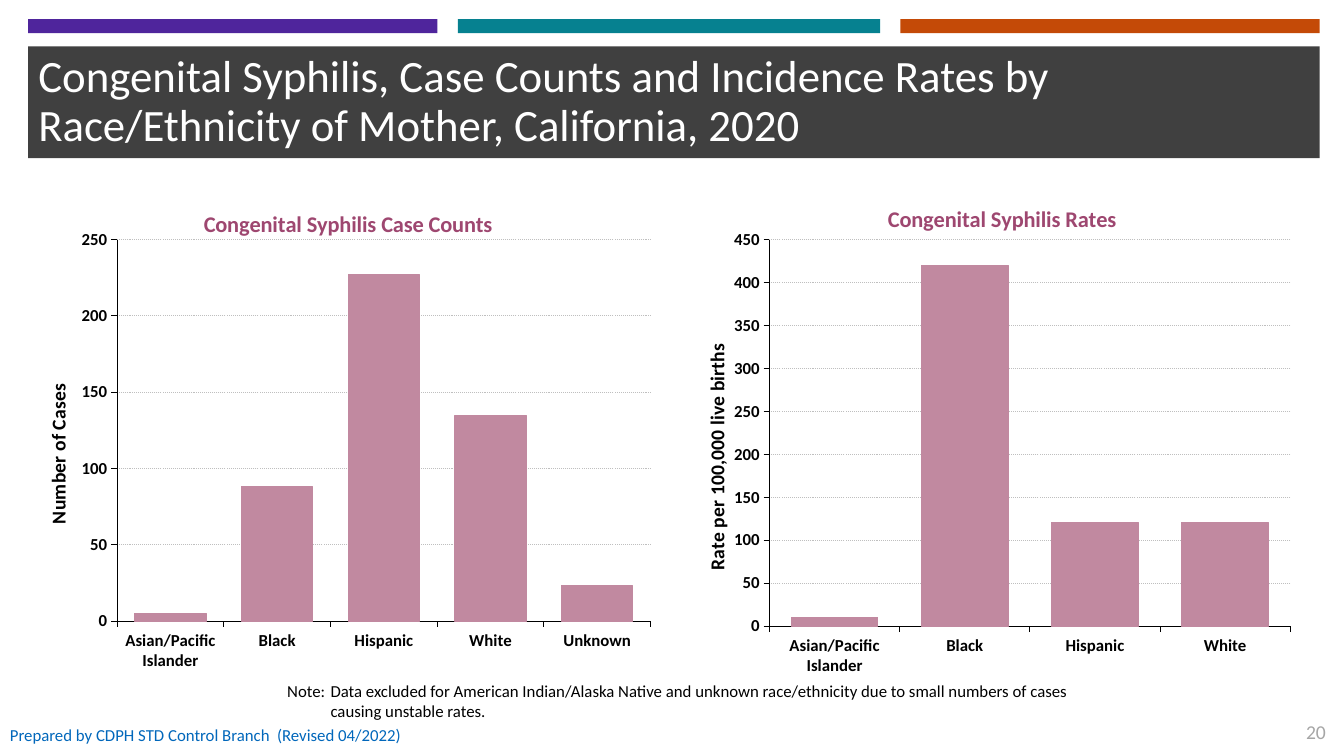
import lxml.etree
import pptx
import pptx.chart.data
import pptx.dml.color
import pptx.enum.chart
import pptx.enum.dml
import pptx.enum.shapes
import pptx.enum.text
import pptx.oxml.ns
import pptx.util
from dataclasses import dataclass

PX = 9144
qn = pptx.oxml.ns.qn
Align = pptx.enum.text.PP_ALIGN
Anchor = pptx.enum.text.MSO_ANCHOR


@dataclass(frozen=True)
class Theme:
    font: str = "Calibri"
    black: str = "000000"
    white: str = "FFFFFF"
    band: str = "404040"
    purple: str = "4F259C"
    teal: str = "068190"
    orange: str = "C44A07"
    link_blue: str = "0167BB"
    page_gray: str = "A6A6A6"
    grid: str = "BFBFBF"
    bar: str = "C189A0"
    heading: str = "9E4770"
    title_size: int = 32
    heading_size: int = 16
    axis_title_size: int = 14
    page_size: int = 14
    body_size: int = 12
    chart_size: int = 10


def rgb(code):
    return pptx.dml.color.RGBColor.from_string(code)


def box(*lengths):
    return [pptx.util.Emu(length * PX) for length in lengths]


def set_layout(parent, **fractions):
    old = parent.find(qn("c:layout"))
    if old is not None:
        parent.remove(old)
    layout = lxml.etree.Element(qn("c:layout"))
    parent.insert(0 if parent.find(qn("c:tx")) is None else 1, layout)
    manual = lxml.etree.SubElement(layout, qn("c:manualLayout"))
    settings = {"xMode": "edge", "yMode": "edge", **fractions}
    if "w" in fractions:
        settings = {"layoutTarget": "inner", **settings}
    for name, value in settings.items():
        lxml.etree.SubElement(manual, qn("c:" + name)).set("val", str(value))


class SlideBuilder:
    def __init__(self, slide, theme):
        self.slide = slide
        self.theme = theme

    def style(self, font, size, color, bold=False):
        font.name = self.theme.font
        font.size = pptx.util.Pt(size)
        font.color.rgb = rgb(color)
        font.bold = bold

    def line(self, line, color):
        line.color.rgb = rgb(color)
        line.width = pptx.util.Pt(0.75)

    def title(self, text, at):
        title = self.slide.shapes.title
        title.left, title.top, title.width, title.height = box(*at)
        title.fill.solid()
        title.fill.fore_color.rgb = rgb(self.theme.band)
        frame = title.text_frame
        frame.text = text
        frame.word_wrap = True
        frame.auto_size = pptx.enum.text.MSO_AUTO_SIZE.NONE
        frame.vertical_anchor = Anchor.MIDDLE
        paragraph = frame.paragraphs[0]
        paragraph.alignment = Align.LEFT
        paragraph.line_spacing = 0.9
        self.style(paragraph.runs[0].font, self.theme.title_size, self.theme.white)

    def stripe(self, at, color):
        stripe = self.slide.shapes.add_shape(
            pptx.enum.shapes.MSO_SHAPE.RECTANGLE, *box(*at))
        stripe.shadow.inherit = False
        stripe.fill.solid()
        stripe.fill.fore_color.rgb = rgb(color)
        stripe.line.fill.background()

    def text(self, text, at, size, color, align=Align.LEFT, anchor=Anchor.MIDDLE, wrap=True):
        frame = self.slide.shapes.add_textbox(*box(*at)).text_frame
        frame.word_wrap = wrap
        frame.vertical_anchor = anchor
        paragraph = frame.paragraphs[0]
        paragraph.text = text
        paragraph.alignment = align
        self.style(paragraph.runs[0].font, size, color)
        return paragraph

    def note(self, text, at, indent):
        paragraph = self.text(text, at, self.theme.body_size, self.theme.black, anchor=Anchor.TOP)
        paragraph.space_after = pptx.util.Pt(1)
        properties = paragraph._p.get_or_add_pPr()
        properties.set("marL", str(indent * PX))
        properties.set("indent", str(-indent * PX))
        tabs = lxml.etree.SubElement(properties, qn("a:tabLst"))
        lxml.etree.SubElement(tabs, qn("a:tab"), pos=str(indent * PX), algn="l")

    def chart_label(self, label, text, size, color, position):
        label.text_frame.text = text
        self.style(label.text_frame.paragraphs[0].runs[0].font, size, color, True)
        x, y = position
        set_layout(label.element, x=x, y=y)

    def axis(self, axis):
        axis.major_tick_mark = pptx.enum.chart.XL_TICK_MARK.OUTSIDE
        axis.minor_tick_mark = pptx.enum.chart.XL_TICK_MARK.NONE
        self.style(axis.tick_labels.font, self.theme.body_size, self.theme.black, True)
        self.line(axis.format.line, self.theme.black)

    def column_chart(self, at, heading, heading_at, unit, unit_at, values, top, plot_area, number_format):
        theme = self.theme
        data = pptx.chart.data.CategoryChartData()
        data.categories = list(values)
        data.add_series("Series 1", list(values.values()))
        chart = self.slide.shapes.add_chart(
            pptx.enum.chart.XL_CHART_TYPE.COLUMN_CLUSTERED, *box(*at), data).chart
        self.style(chart.font, theme.chart_size, theme.black)
        chart.has_legend = False
        chart.has_title = True
        self.chart_label(chart.chart_title, heading, theme.heading_size, theme.heading, heading_at)
        self.axis(chart.category_axis)

        scale = chart.value_axis
        self.axis(scale)
        scale.minimum_scale = 0
        scale.maximum_scale = top
        scale.major_unit = 50
        scale.tick_labels.number_format = number_format
        scale.tick_labels.number_format_is_linked = False
        scale.has_major_gridlines = True
        self.line(scale.major_gridlines.format.line, theme.grid)
        scale.major_gridlines.format.line.dash_style = pptx.enum.dml.MSO_LINE.ROUND_DOT
        scale.has_title = True
        self.chart_label(scale.axis_title, unit, theme.axis_title_size, theme.black, unit_at)
        body = scale.axis_title.element.find(".//" + qn("a:bodyPr"))
        body.set("rot", "-5400000")
        body.set("vert", "horz")

        plot = chart.plots[0]
        plot.gap_width = 50
        plot.vary_by_categories = False
        bars = plot.series[0].format
        bars.fill.solid()
        bars.fill.fore_color.rgb = rgb(theme.bar)
        self.line(bars.line, theme.bar)
        set_layout(chart.element.find(".//" + qn("c:plotArea")), **dict(zip("xywh", plot_area)))


def main():
    theme = Theme()
    deck = pptx.Presentation()
    deck.slide_width, deck.slide_height = box(1333, 750)
    page = SlideBuilder(deck.slides.add_slide(deck.slide_layouts[5]), theme)

    page.title("Congenital Syphilis, Case Counts and Incidence Rates by "
               "Race/Ethnicity of Mother, California, 2020", (28, 46, 1281, 111))
    for left, width, color in ((28, 406, theme.purple), (454, 419, theme.teal),
                               (893, 416, theme.orange)):
        page.stripe((left, 19, width, 14), color)

    page.column_chart(
        (28, 178, 630, 498), "Congenital Syphilis Case Counts", (0.27, 0.05),
        "Number of Cases", (0.02, 0.4),
        {"Asian/Pacific Islander": 5, "Black": 88, "Hispanic": 227, "White": 135, "Unknown": 23},
        250, (0.14, 0.12, 0.84, 0.76), "General")
    page.column_chart(
        (675, 178, 630, 498), "Congenital Syphilis Rates", (0.32, 0.04),
        "Rate per 100,000 live births", (0.03, 0.32),
        {"Asian/Pacific Islander": 10, "Black": 420, "Hispanic": 120, "White": 120},
        450, (0.14, 0.12, 0.82, 0.77), "#,##0")

    page.note("Note:\tData excluded for American Indian/Alaska Native and unknown race/ethnicity "
              "due to small numbers of cases causing unstable rates.", (275, 670, 825, 50), 43)
    page.text("Prepared by CDPH STD Control Branch", (0, 709, 280, 40),
              theme.body_size, theme.link_blue)
    page.text("(Revised 04/2022)", (265, 709, 150, 40), theme.body_size, theme.link_blue)
    page.text("20", (1282, 709, 43, 34), theme.page_size, theme.page_gray,
              Align.RIGHT, Anchor.TOP, False)
    deck.save("out.pptx")


if __name__ == "__main__":
    main()
